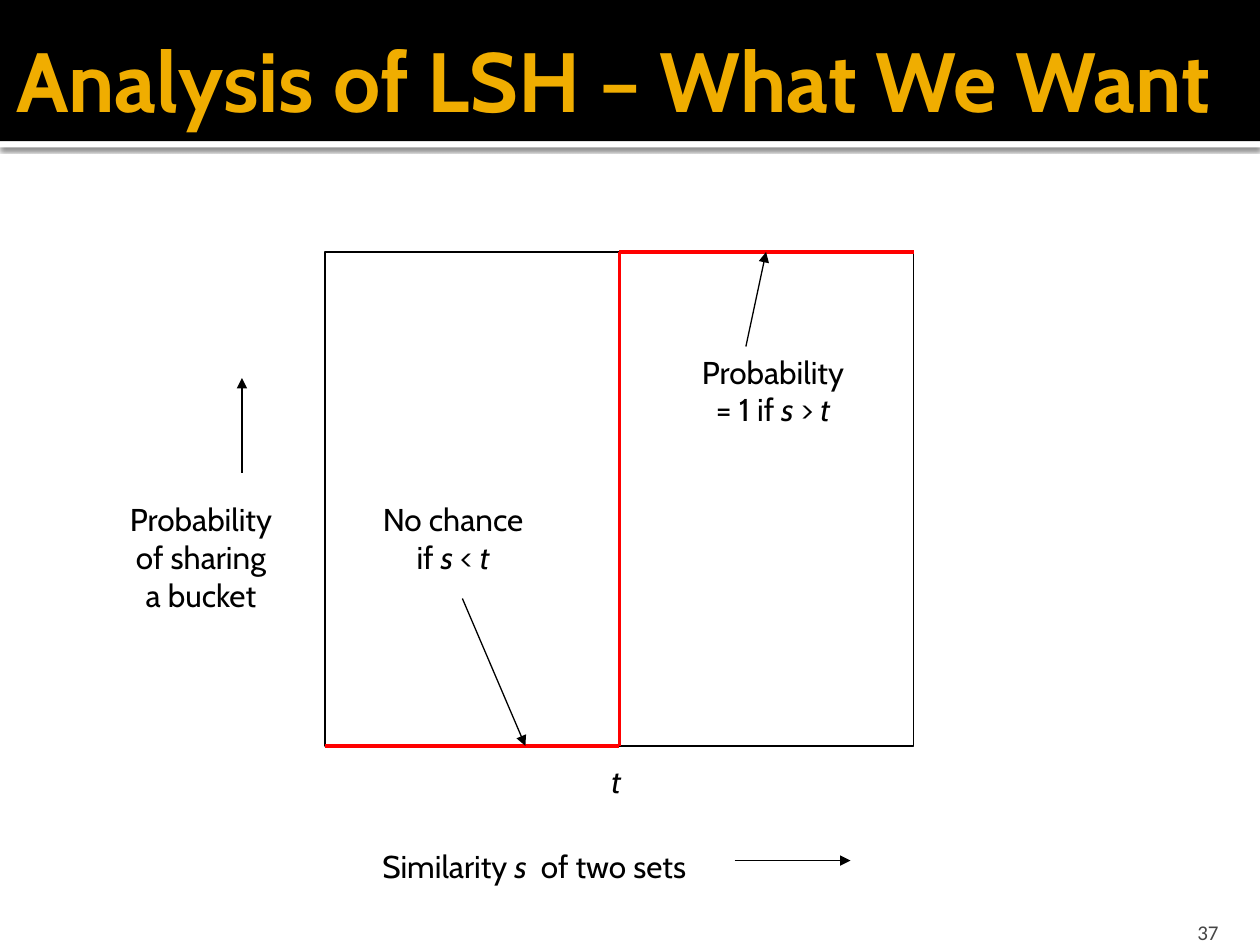
from lxml import etree
from pptx import Presentation
from pptx.dml.color import RGBColor
from pptx.enum import shapes as kinds, text as txt
from pptx.oxml import ns
from pptx.util import Inches, Pt

COLORS = {"black": "000000", "white": "FFFFFF", "title": "F0AD00",
          "step": "FF0000", "number": "454545"}
TOP, BOTTOM = 0, 2  # connection sites of a rectangle


def rgb(name):
    return RGBColor.from_string(COLORS[name])


def add_rect(shapes, box, fill=None, line=None):
    rect = shapes.add_shape(kinds.MSO_SHAPE.RECTANGLE, *map(Inches, box))
    rect.shadow.inherit = False
    if fill:
        rect.fill.solid()
        rect.fill.fore_color.rgb = rgb(fill)
    else:
        rect.fill.background()
    if line:
        rect.line.color.rgb = rgb(line)
        rect.line.width = Pt(0.75)
    else:
        rect.line.fill.background()
    return rect


def add_drop_shadow(rect):
    """Fill the rectangle's empty effect list with a soft downward shadow."""
    effects = rect._element.spPr.find(ns.qn("a:effectLst"))
    shadow = etree.SubElement(effects, ns.qn("a:outerShdw"), blurRad=str(Pt(2.5)),
                              dist=str(Pt(0.8)), dir="5400000", rotWithShape="0")
    color = etree.SubElement(shadow, ns.qn("a:srgbClr"), val=COLORS["black"])
    etree.SubElement(color, ns.qn("a:alpha"), val="60000")


def add_text(shapes, box, content, size=18, font="Cabin", color="black", bold=False,
             align=txt.PP_ALIGN.CENTER, anchor=txt.MSO_ANCHOR.TOP, wrap=False,
             right=0.1, bottom=0.05):
    """Add one paragraph per line; parts between asterisks are italic."""
    label = shapes.add_textbox(*map(Inches, box))
    frame = label.text_frame
    frame.word_wrap = wrap
    frame.vertical_anchor = anchor
    frame.margin_right, frame.margin_bottom = Inches(right), Inches(bottom)
    for row, line in enumerate(content.split("\n")):
        paragraph = frame.add_paragraph() if row else frame.paragraphs[0]
        paragraph.alignment = align
        for index, part in enumerate(line.split("*")):
            if not part:
                continue
            run = paragraph.add_run()
            run.text = part
            run.font.size, run.font.name = Pt(size), font
            run.font.bold, run.font.italic = bold, index % 2 == 1
            run.font.color.rgb = rgb(color)


def add_line(shapes, start, end, color="black", width=0.75, arrow=False):
    line = shapes.add_connector(kinds.MSO_CONNECTOR.STRAIGHT,
                                *map(Inches, (*start, *end)))
    line.line.color.rgb = rgb(color)
    line.line.width = Pt(width)
    if arrow:
        etree.SubElement(line.line._get_or_add_ln(), ns.qn("a:tailEnd"), type="triangle")
    etree.SubElement(line._element.spPr, ns.qn("a:effectLst"))
    return line


def add_callout(slide, box, content, start, end):
    """Group a label with the arrow that leads from it to the step."""
    group = slide.shapes.add_group_shape()
    add_text(group.shapes, box, content)
    add_line(group.shapes, start, end, arrow=True)


def add_header(shapes):
    strip = add_rect(shapes, (0, 1.12, 10, 0.05), fill="white")
    add_drop_shadow(strip)
    add_rect(shapes, (0, 0, 10, 1.12), fill="black")
    add_text(shapes, (0.03, 0, 10, 1.25), "Analysis of LSH – What We Want", size=48,
             color="title", bold=True, align=txt.PP_ALIGN.LEFT,
             anchor=txt.MSO_ANCHOR.MIDDLE, wrap=True, right=0.05)


def add_step(shapes, left, top, width, height):
    """Draw the plot frame and the ideal step at its middle."""
    frame = add_rect(shapes, (left, top, width, height), line="black")
    right, bottom, threshold = left + width, top + height, left + width / 2
    red = {"color": "step", "width": 2}
    no_chance = add_line(shapes, (left, bottom), (threshold, bottom), **red)
    no_chance.end_connect(frame, BOTTOM)
    jump = add_line(shapes, (threshold, bottom), (threshold, top), **red)
    jump.begin_connect(frame, BOTTOM)
    jump.end_connect(frame, TOP)
    certain = add_line(shapes, (threshold, top), (right, top), **red)
    certain.begin_connect(frame, TOP)


def main():
    deck = Presentation()
    deck.slide_width, deck.slide_height = Inches(10), Inches(7.5)
    slide = deck.slides.add_slide(deck.slide_layouts[6])
    shapes = slide.shapes

    add_header(shapes)
    add_text(shapes, (8.97, 7.2, 0.8, 0.3), "37", size=12, font="Calibri",
             color="number", align=txt.PP_ALIGN.RIGHT,
             anchor=txt.MSO_ANCHOR.BOTTOM, wrap=True, bottom=0)

    add_step(shapes, 2.58, 2, 4.67, 3.92)
    add_text(shapes, (4.75, 6, 0.28, 0.4), "*t*")

    add_text(shapes, (2.93, 6.67, 2.62, 0.4), "Similarity *s*  of two sets")
    add_line(shapes, (5.83, 6.83), (6.75, 6.83), arrow=True)
    add_text(shapes, (0.92, 3.92, 1.35, 1), "Probability\nof sharing\na bucket")
    add_line(shapes, (1.92, 3.75), (1.92, 3), arrow=True)

    add_callout(slide, (2.92, 3.92, 1.35, 0.7), "No chance\nif *s* < *t*",
                (3.67, 4.75), (4.17, 5.92))
    add_callout(slide, (5.42, 2.75, 1.43, 0.7), "Probability\n= 1 if *s* > *t*",
                (5.92, 2.75), (6.08, 2))
    deck.save("out.pptx")


if __name__ == "__main__":
    main()
